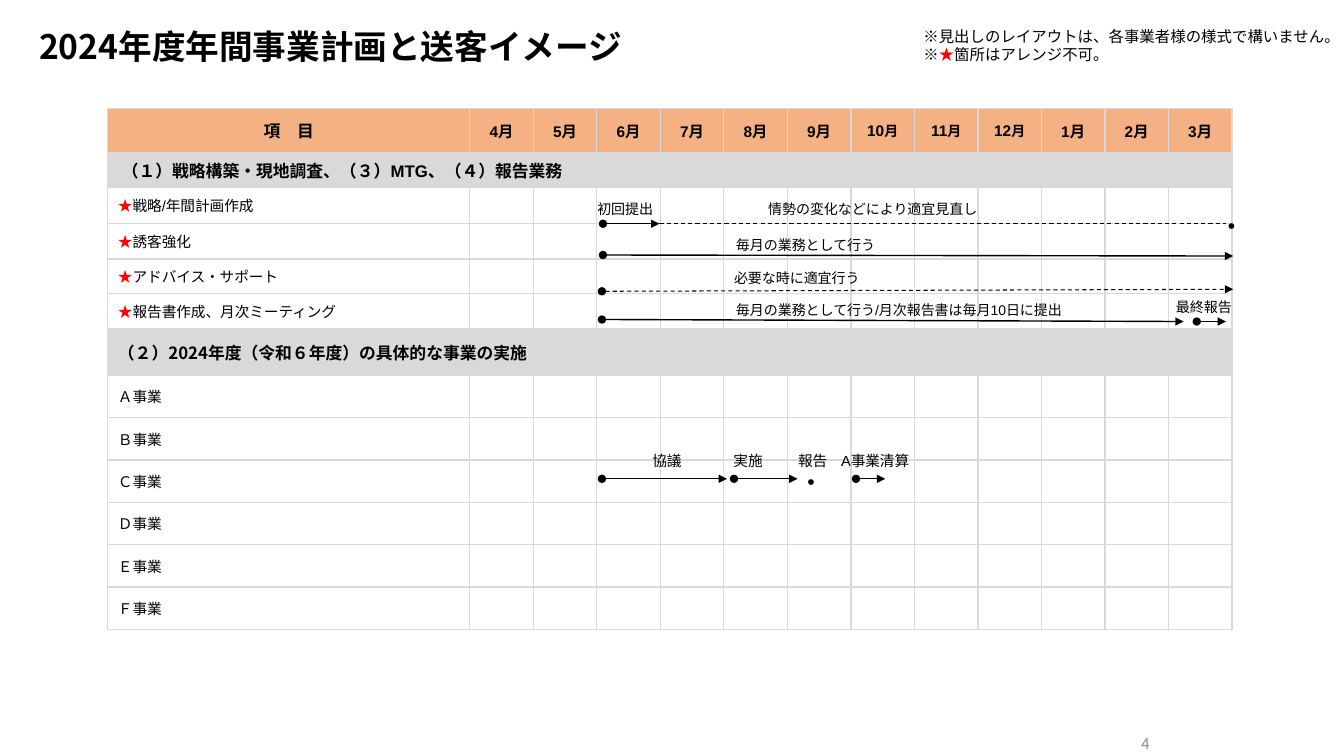
import lxml.etree
import pptx
import pptx.dml.color
import pptx.enum.dml
import pptx.enum.shapes
import pptx.enum.text
import pptx.oxml
import pptx.oxml.ns
import pptx.util

Inches = pptx.util.Inches
ALIGN = pptx.enum.text.PP_ALIGN
MIDDLE = pptx.enum.text.MSO_ANCHOR.MIDDLE
qn = pptx.oxml.ns.qn

GOTHIC = "Noto Sans CJK JP"
BLACK, RED, WHITE = "000000", "FF0000", "FFFFFF"
ORANGE, GREY, PAGE_GREY = "F4B183", "D9D9D9", "8C8C8C"
LABEL_INSETS = (0.04, 0.02, 0.04, 0.02)
BOX_INSETS = (0.1, 0.05, 0.1, 0.05)

ITEM_WIDTH, MONTH_WIDTH = 3.59, 0.63
ROW_HEIGHTS = [0.43, 0.35, 0.36, 0.35, 0.34, 0.35, 0.46] + [0.42] * 6
MONTHS = [4, 5, 6, 7, 8, 9, 10, 11, 12, 1, 2, 3]
STARRED_TASKS = ["戦略/年間計画作成", "誘客強化", "アドバイス・サポート", "報告書作成、月次ミーティング"]
PROJECTS = ["Ａ事業", "Ｂ事業", "Ｃ事業", "Ｄ事業", "Ｅ事業", "Ｆ事業"]

# text, left, top, width, size, alignment
LABELS = [
    ("情勢の変化などにより適宜見直し", 7.42, 1.94, 2.47, 10, ALIGN.CENTER),
    ("初回提出", 5.69, 1.94, 1.02, 10, ALIGN.CENTER),
    ("毎月の業務として行う", 7.26, 2.3, 2.47, 10, ALIGN.LEFT),
    ("必要な時に適宜行う", 7.24, 2.63, 2.47, 10, ALIGN.LEFT),
    ("毎月の業務として行う/月次報告書は毎月10日に提出", 7.26, 2.94, 3.6, 10, ALIGN.LEFT),
    ("最終報告", 11.43, 2.91, 1.02, 10, ALIGN.CENTER),
    ("協議", 5.83, 4.44, 1.57, 10.5, ALIGN.CENTER),
    ("実施", 6.91, 4.44, 1.02, 10.5, ALIGN.CENTER),
    ("報告", 7.55, 4.44, 1.02, 10.5, ALIGN.CENTER),
    ("A事業清算", 8.17, 4.44, 1.02, 10.5, ALIGN.CENTER),
]

# start x, start y, end x, end y
SOLID_ARROWS = [
    (5.98, 2.22, 6.54, 2.22),
    (5.98, 2.53, 12.23, 2.54),
    (5.97, 3.17, 11.74, 3.19),
    (11.87, 3.19, 12.16, 3.19),
    (5.97, 4.75, 7.21, 4.75),
    (7.28, 4.75, 7.91, 4.75),
    (8.49, 4.75, 8.78, 4.75),
]


def color(value):
    return pptx.dml.color.RGBColor.from_string(value)


def add_span(para, text, size, font="Arial", tint=BLACK, bold=False):
    span = para.add_run()
    span.text = text
    span.font.size = pptx.util.Pt(size)
    span.font.bold = bold
    span.font.color.rgb = color(tint)
    span.font.name = font
    east_asian = lxml.etree.SubElement(span.font._element, qn("a:ea"))
    east_asian.set("typeface", GOTHIC)


def add_box(page, left, top, width, height, insets=BOX_INSETS):
    box = page.shapes.add_textbox(Inches(left), Inches(top), Inches(width), Inches(height))
    frame = box.text_frame
    frame.word_wrap = True
    frame.margin_left, frame.margin_top, frame.margin_right, frame.margin_bottom = map(Inches, insets)
    return frame


def add_label(page, text, left, top, width, size, align):
    frame = add_box(page, left, top, width, 0.23, LABEL_INSETS)
    frame.auto_size = pptx.enum.text.MSO_AUTO_SIZE.SHAPE_TO_FIT_TEXT
    frame.vertical_anchor = MIDDLE
    para = frame.paragraphs[0]
    para.alignment = align
    para.line_spacing = 1.2
    para.space_before = pptx.util.Pt(10)
    add_span(para, text, size)


def add_line(page, ends, weight=1, dashed=False, arrow=True):
    line = page.shapes.add_connector(
        pptx.enum.shapes.MSO_CONNECTOR.STRAIGHT, *map(Inches, ends))
    line.line.color.rgb = color(BLACK)
    line.line.width = pptx.util.Pt(weight)
    if dashed:
        line.line.dash_style = pptx.enum.dml.MSO_LINE.DASH
    if arrow:
        stroke = line.line._get_or_add_ln()
        for tag, kind in (("a:headEnd", "oval"), ("a:tailEnd", "triangle")):
            lxml.etree.SubElement(stroke, qn(tag)).set("type", kind)
    lxml.etree.SubElement(line._element.spPr, qn("a:effectLst"))


def style_cell(cell, fill):
    cell.vertical_anchor = MIDDLE
    cell.margin_top = cell.margin_bottom = Inches(0.02)
    if fill:
        cell.fill.solid()
        cell.fill.fore_color.rgb = color(fill)
    else:
        cell.fill.background()
    # Borders come before the fill in the cell properties
    properties = cell._tc.get_or_add_tcPr()
    for position, side in enumerate(("a:lnL", "a:lnR", "a:lnT", "a:lnB")):
        border = lxml.etree.Element(qn(side), w=str(pptx.util.Pt(1)))
        solid = lxml.etree.SubElement(border, qn("a:solidFill"))
        lxml.etree.SubElement(solid, qn("a:srgbClr")).set("val", GREY)
        properties.insert(position, border)


def add_schedule(page):
    width = ITEM_WIDTH + MONTH_WIDTH * len(MONTHS)
    shape = page.shapes.add_table(
        len(ROW_HEIGHTS), len(MONTHS) + 1,
        Inches(1.07), Inches(1.08), Inches(width), Inches(sum(ROW_HEIGHTS)))
    table = shape.table
    table.first_row = table.horz_banding = False
    for index, column in enumerate(table.columns):
        column.width = Inches(MONTH_WIDTH if index else ITEM_WIDTH)
    fills = [ORANGE, GREY] + [WHITE] * len(STARRED_TASKS) + [GREY] + [None] * len(PROJECTS)
    for row, height, fill in zip(table.rows, ROW_HEIGHTS, fills):
        row.height = Inches(height)
        for cell in row.cells:
            style_cell(cell, fill)

    def cell_para(row, column=0):
        return table.cell(row, column).text_frame.paragraphs[0]

    # Header
    para = cell_para(0)
    para.alignment = ALIGN.CENTER
    add_span(para, "項　目", 12, bold=True)
    for column, month in enumerate(MONTHS, 1):
        para = cell_para(0, column)
        para.alignment = ALIGN.CENTER
        table.cell(0, column).margin_left = table.cell(0, column).margin_right = Inches(0.05)
        add_span(para, str(month), 11, bold=True)
        add_span(para, "月", 10 if month >= 10 else 11, bold=True)

    # Section bands
    for row in (1, 6):
        table.cell(row, 0).merge(table.cell(row, len(MONTHS)))
    add_span(cell_para(1), " ", 12, GOTHIC, bold=True)
    add_span(cell_para(1), "（１）戦略構築・現地調査、（３）MTG、（４）報告業務", 12, bold=True)
    add_span(cell_para(6), "（２）2024年度（令和６年度）の具体的な事業の実施", 12, GOTHIC, bold=True)

    # Items
    for row, task in enumerate(STARRED_TASKS, 2):
        add_span(cell_para(row), "★", 10.5, tint=RED, bold=True)
        add_span(cell_para(row), task, 10.5)
    for row, project in enumerate(PROJECTS, 7):
        add_span(cell_para(row), project, 10.5)


def main():
    deck = pptx.Presentation()
    deck.slide_width, deck.slide_height = Inches(13.33), Inches(7.5)
    page = deck.slides.add_slide(deck.slide_layouts[6])

    add_schedule(page)

    # Title and note
    title = add_box(page, 0.29, 0.21, 8.5, 0.5)
    add_span(title.paragraphs[0], "2024年度年間事業計画と送客イメージ", 24, GOTHIC, bold=True)
    note = add_box(page, 9.06, 0.22, 4.27, 0.47, (0.1, 0.05, 0, 0.05))
    add_span(note.paragraphs[0], "※見出しのレイアウトは、各事業者様の様式で構いません。", 11, GOTHIC)
    para = note.add_paragraph()
    for text, tint in (("※", BLACK), ("★", RED), ("箇所はアレンジ不可。", BLACK)):
        add_span(para, text, 11, GOTHIC, tint)

    # Timeline
    for ends in SOLID_ARROWS:
        add_line(page, ends)
    add_line(page, (6.54, 2.22, 12.16, 2.22), 0.75, dashed=True, arrow=False)
    add_line(page, (5.97, 2.89, 12.23, 2.87), 0.75, dashed=True)
    for label in LABELS:
        add_label(page, *label)
    for left, top in ((7.91, 4.6), (12.08, 2.06)):
        add_span(add_box(page, left, top, 0.3, 0.35).paragraphs[0], "•", 15)

    # Page number
    number = add_box(page, 9.25, 7.17, 2.25, 0.4)
    number.vertical_anchor = MIDDLE
    number.paragraphs[0].alignment = ALIGN.RIGHT
    add_span(number.paragraphs[0], "4", 12, "Calibri", PAGE_GREY)

    deck.save("out.pptx")


if __name__ == "__main__":
    main()
